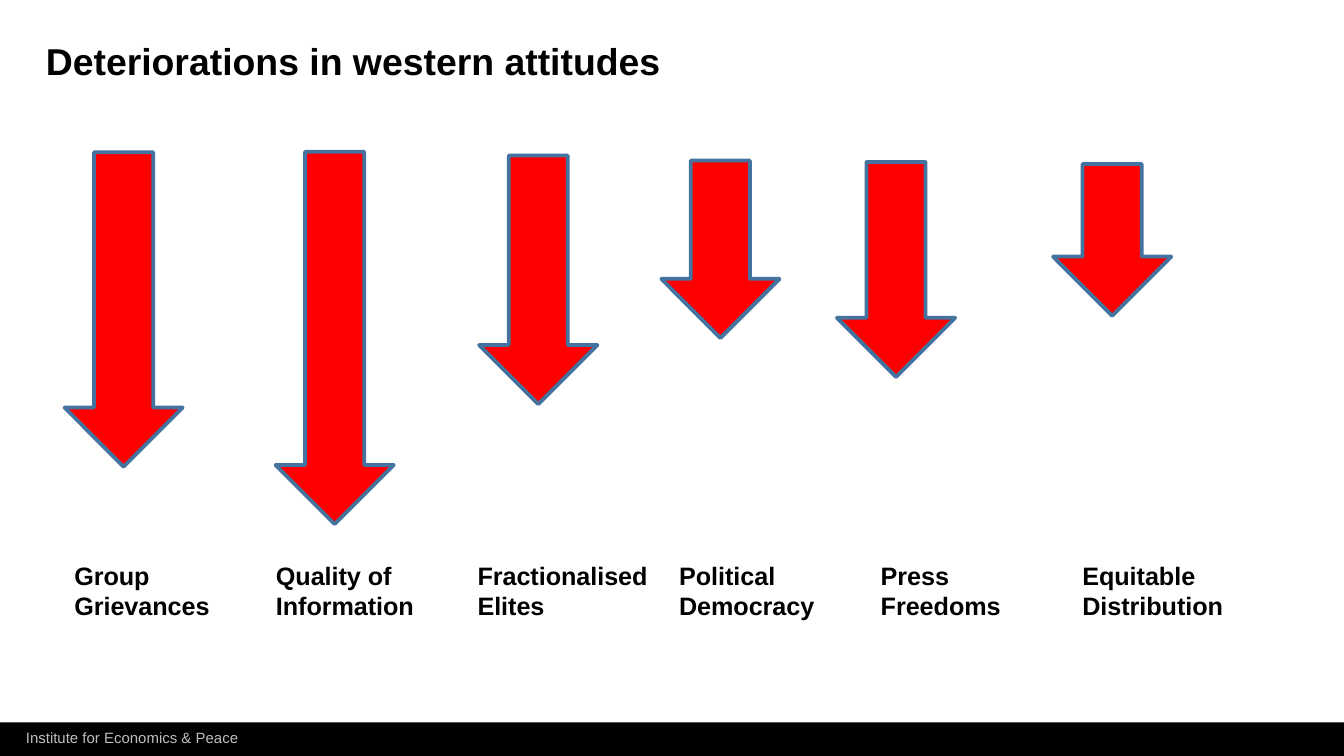
from dataclasses import dataclass

from lxml import etree
from pptx import Presentation
from pptx import util as u
from pptx.dml import color
from pptx.enum import shapes, text
from pptx.oxml import ns

COLORS = {
    "black": "000000",
    "footer": "BFBFBF",
    "arrow": "FF0000",
    "outline": "43739E",
}
FONT = "Arial"
CELL = u.Inches(0.1)
COLUMNS, ROWS = 100, 56.25
FOOTER_ROWS = 2.5
ARROW_COLUMNS = 8.8
LABEL_STEP = 15


@dataclass(frozen=True)
class Box:
    column: float
    row: float
    columns: float
    rows: float

    def emu(self) -> list[int]:
        return [round(n * CELL) for n in (self.column, self.row, self.columns, self.rows)]


@dataclass(frozen=True)
class Decline:
    attitude: tuple[str, str]
    column: float
    row: float
    rows: float


@dataclass(frozen=True)
class Style:
    size: float
    color: str
    bold: bool = False


DECLINES = [
    Decline(("Group", "Grievances"), 4.8, 11.33, 23.4),
    Decline(("Quality of", "Information"), 20.5, 11.3, 27.7),
    Decline(("Fractionalised", "Elites"), 35.65, 11.57, 18.5),
    Decline(("Political", "Democracy"), 49.2, 11.95, 13.2),
    Decline(("Press", "Freedoms"), 62.27, 12.05, 16),
    Decline(("Equitable", "Distribution"), 78.35, 12.2, 11.3),
]


def rgb(name: str) -> color.RGBColor:
    return color.RGBColor.from_string(COLORS[name])


def add_shape(slide, kind, box: Box, fill: str, outline: str | None = None) -> None:
    shape = slide.shapes.add_shape(kind, *box.emu())
    shape.shadow.inherit = False
    shape.fill.solid()
    shape.fill.fore_color.rgb = rgb(fill)
    if outline:
        shape.line.color.rgb = rgb(outline)
        shape.line.width = u.Pt(2)
    else:
        shape.line.fill.background()


def add_tabs(paragraph, count: int) -> None:
    tabs = etree.SubElement(paragraph._p.get_or_add_pPr(), ns.qn("a:tabLst"))
    for index in range(1, count + 1):
        position = str(index * LABEL_STEP * CELL)
        etree.SubElement(tabs, ns.qn("a:tab"), pos=position, algn="l")


def add_text(slide, box: Box, lines: list[str], style: Style,
             anchor=text.MSO_ANCHOR.TOP) -> None:
    frame = slide.shapes.add_textbox(*box.emu()).text_frame
    frame.word_wrap = True
    frame.vertical_anchor = anchor
    frame.text = "\n".join(lines)
    for paragraph, line in zip(frame.paragraphs, lines):
        if "\t" in line:
            add_tabs(paragraph, line.count("\t"))
        font = paragraph.font
        font.name = FONT
        font.size = u.Pt(style.size)
        font.bold = style.bold
        font.color.rgb = rgb(style.color)


def main() -> None:
    deck = Presentation()
    deck.slide_width = COLUMNS * CELL
    deck.slide_height = round(ROWS * CELL)
    slide = deck.slides.add_slide(deck.slide_layouts[6])

    footer = Box(0, ROWS - FOOTER_ROWS, COLUMNS, FOOTER_ROWS)
    add_shape(slide, shapes.MSO_SHAPE.RECTANGLE, footer, "black")
    add_text(slide, Box(0.95, 53.65, 18, 2.4), ["Institute for Economics & Peace"],
             Style(8, "footer"), text.MSO_ANCHOR.MIDDLE)
    add_text(slide, Box(2.43, 2.35, 87, 4.4), ["Deteriorations in western attitudes"],
             Style(20, "black", True))

    label_lines = ["\t".join(words) for words in zip(*(d.attitude for d in DECLINES))]
    add_text(slide, Box(4.55, 41.2, 89.4, 5.6), label_lines, Style(13.5, "black", True))

    for decline in DECLINES:
        arrow = Box(decline.column, decline.row, ARROW_COLUMNS, decline.rows)
        add_shape(slide, shapes.MSO_SHAPE.DOWN_ARROW, arrow, "arrow", "outline")

    deck.save("out.pptx")


if __name__ == "__main__":
    main()
